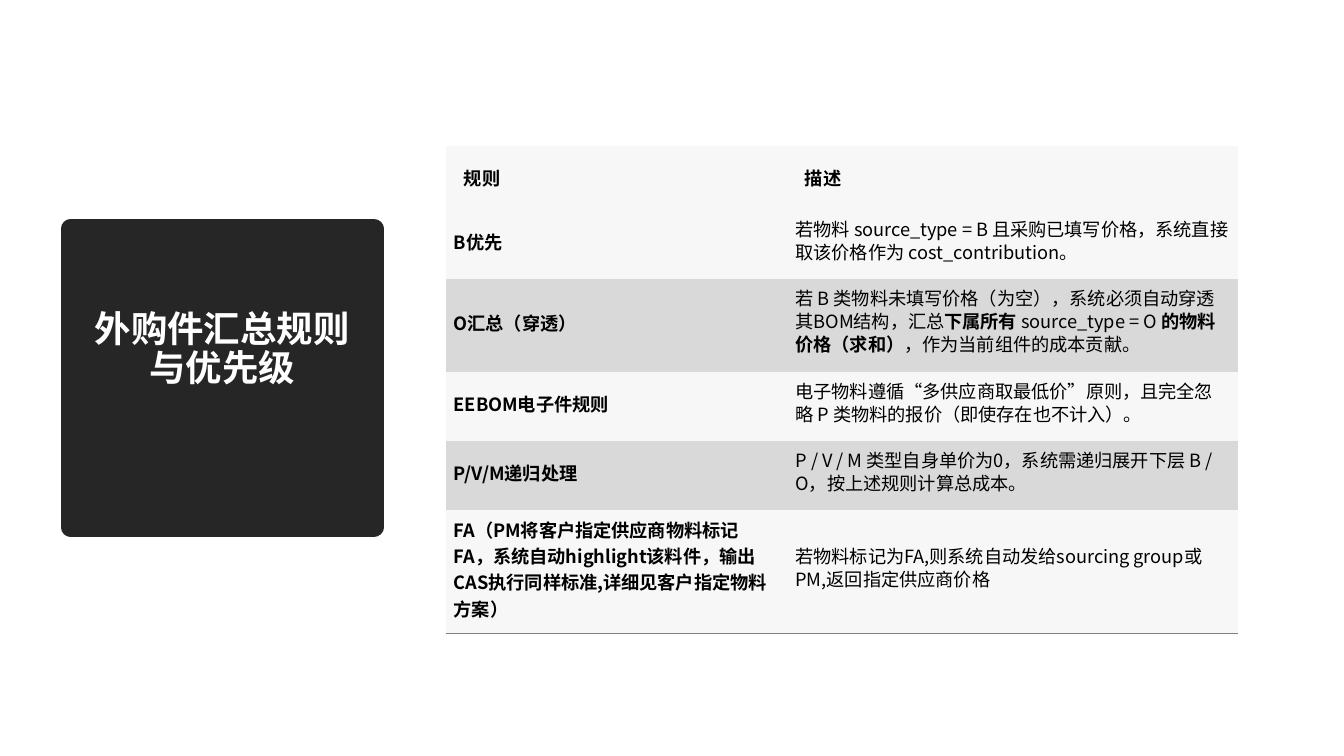
from lxml.etree import SubElement
from pptx import Presentation
from pptx.dml.color import RGBColor
from pptx.enum.lang import MSO_LANGUAGE_ID
from pptx.enum.text import MSO_ANCHOR, MSO_AUTO_SIZE, PP_ALIGN
from pptx.oxml.ns import qn
from pptx.util import Inches, Pt

TITLE = "外购件汇总规则与优先级"
HEADS = ("规则", "描述")
RULES = [
    ("B优先", [
        ("若物料 source_type = B 且采购已填写价格，系统直接取该价格作为 cost_contribution。", False)]),
    ("O汇总（穿透）", [
        ("若 B 类物料未填写价格（为空），系统必须自动穿透其BOM结构，汇总", False),
        ("下属所有 ", True),
        ("source_type = O", False),
        (" 的物料价格（求和）", True),
        ("，作为当前组件的成本贡献。", False)]),
    ("EEBOM电子件规则", [
        ("电子物料遵循“多供应商取最低价”原则，且完全忽略 P 类物料的报价（即使存在也不计入）。", False)]),
    ("P/V/M递归处理", [
        ("P / V / M 类型自身单价为0，系统需递归展开下层 B / O，按上述规则计算总成本。", False)]),
    ("FA（PM将客户指定供应商物料标记FA，系统自动highlight该料件，输出CAS执行同样标准,详细见客户指定物料方案）", [
        ("若物料标记为FA,则系统自动发给sourcing group或PM,返回指定供应商价格", False)]),
]
THEME = {
    "font": "Noto Sans CJK SC", "title": 26, "body": 13,
    "dark": "262626", "white": "FFFFFF", "ink": "000000",
    "light": "F7F7F7", "band": "D9D9D9", "rule": "808080",
}
DISC = (0.7, 2.27, 3.01, 2.96)
GRID = (4.42, 1.45, 7.86, 4.61)
COLS = (3.38, 4.48)
ROWS = (0.63, 0.69, 0.92, 0.69, 0.68, 1)
SIDES = ("margin_left", "margin_top", "margin_right", "margin_bottom")
PADS = ((0.08, 0.06, 0.09, 0.12), (0.09, 0.06, 0.08, 0.12))
LEADS = (18.8, 16.5)
PLAIN = "{2D5ABB26-0587-4C30-8999-92F81FD0307C}"


def put(item, vals):
    for key, val in vals.items():
        setattr(item, key, val)


def hue(name):
    return RGBColor.from_string(THEME[name])


def paint(fill, name):
    fill.solid()
    fill.fore_color.rgb = hue(name)


def pad(item, gaps):
    put(item, dict(zip(SIDES, map(Inches, gaps))))


def write(para, text, size, color, bold, space=0):
    run = para.add_run()
    run.text = text
    put(run.font, {"name": THEME["font"], "size": Pt(THEME[size]), "bold": bold,
                   "language_id": MSO_LANGUAGE_ID.SIMPLIFIED_CHINESE})
    run.font.color.rgb = hue(color)
    props = run.font._element
    SubElement(props, qn("a:ea"), typeface=THEME["font"])
    if space:
        props.set("spc", str(space))


def draw_disc(slide):
    disc = slide.shapes.title
    put(disc, dict(zip(("left", "top", "width", "height"), map(Inches, DISC))))
    geom = SubElement(disc._element.spPr, qn("a:prstGeom"), prst="ellipse")
    SubElement(geom, qn("a:avLst"))
    paint(disc.fill, "dark")
    paint(disc.line.fill, "dark")
    disc.line.width = Pt(13.75)
    frame = disc.text_frame
    put(frame, {"word_wrap": True, "auto_size": MSO_AUTO_SIZE.NONE,
                "vertical_anchor": MSO_ANCHOR.MIDDLE})
    pad(frame, (0.1, 0.05, 0.1, 0.6))
    para = frame.paragraphs[0]
    put(para, {"alignment": PP_ALIGN.CENTER, "line_spacing": 0.9,
               "space_before": Pt(0), "space_after": Pt(6)})
    write(para, TITLE, "title", "white", True)


def rule_off(cell):
    line = SubElement(cell._tc.get_or_add_tcPr(), qn("a:lnB"), w=str(Pt(1)))
    fill = SubElement(line, qn("a:solidFill"))
    SubElement(fill, qn("a:srgbClr"), val=THEME["rule"])


def draw_grid(slide):
    table = slide.shapes.add_table(len(ROWS), len(COLS), *map(Inches, GRID)).table
    put(table, {"first_row": False, "horz_banding": False})
    table._tbl.tblPr.find(qn("a:tableStyleId")).text = PLAIN
    for col, wide in zip(table.columns, COLS):
        col.width = Inches(wide)
    for row, high in zip(table.rows, ROWS):
        row.height = Inches(high)
    body = [([(name, True)], note) for name, note in RULES]
    lines = [tuple([(head, True)] for head in HEADS)] + body
    for r, line in enumerate(lines):
        for c, parts in enumerate(line):
            cell = table.cell(r, c)
            cell.vertical_anchor = MSO_ANCHOR.MIDDLE
            pad(cell, PADS[c] if r else (0.18,) * 4)
            if r == len(lines) - 1:
                rule_off(cell)
            paint(cell.fill, "band" if r and r % 2 == 0 else "light")
            para = cell.text_frame.paragraphs[0]
            para.line_spacing = Pt(LEADS[c] if r else LEADS[0])
            for text, bold in parts:
                write(para, text, "body", "ink", bold, 0 if r else 60)


def main():
    deck = Presentation()
    put(deck, {"slide_width": Inches(13.33), "slide_height": Inches(7.5)})
    slide = deck.slides.add_slide(deck.slide_layouts[5])
    draw_disc(slide)
    draw_grid(slide)
    deck.save("out.pptx")


if __name__ == "__main__":
    main()
